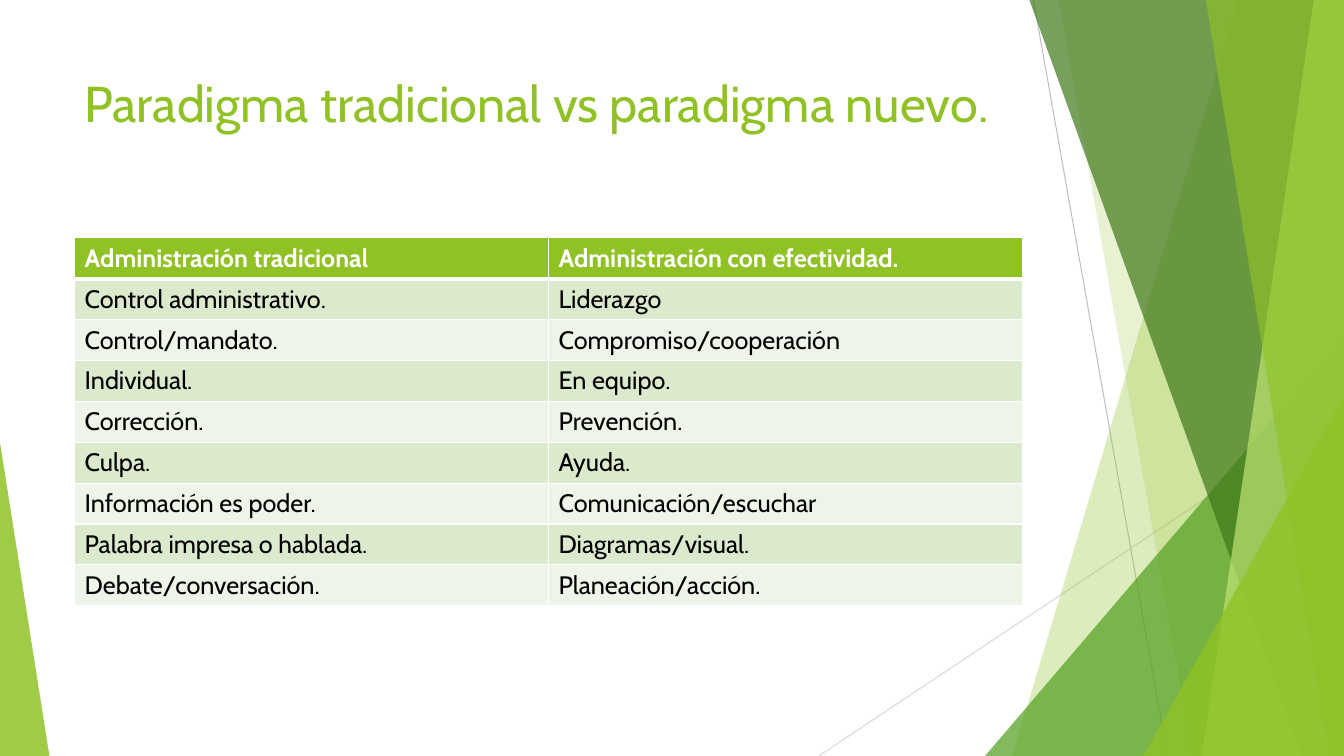
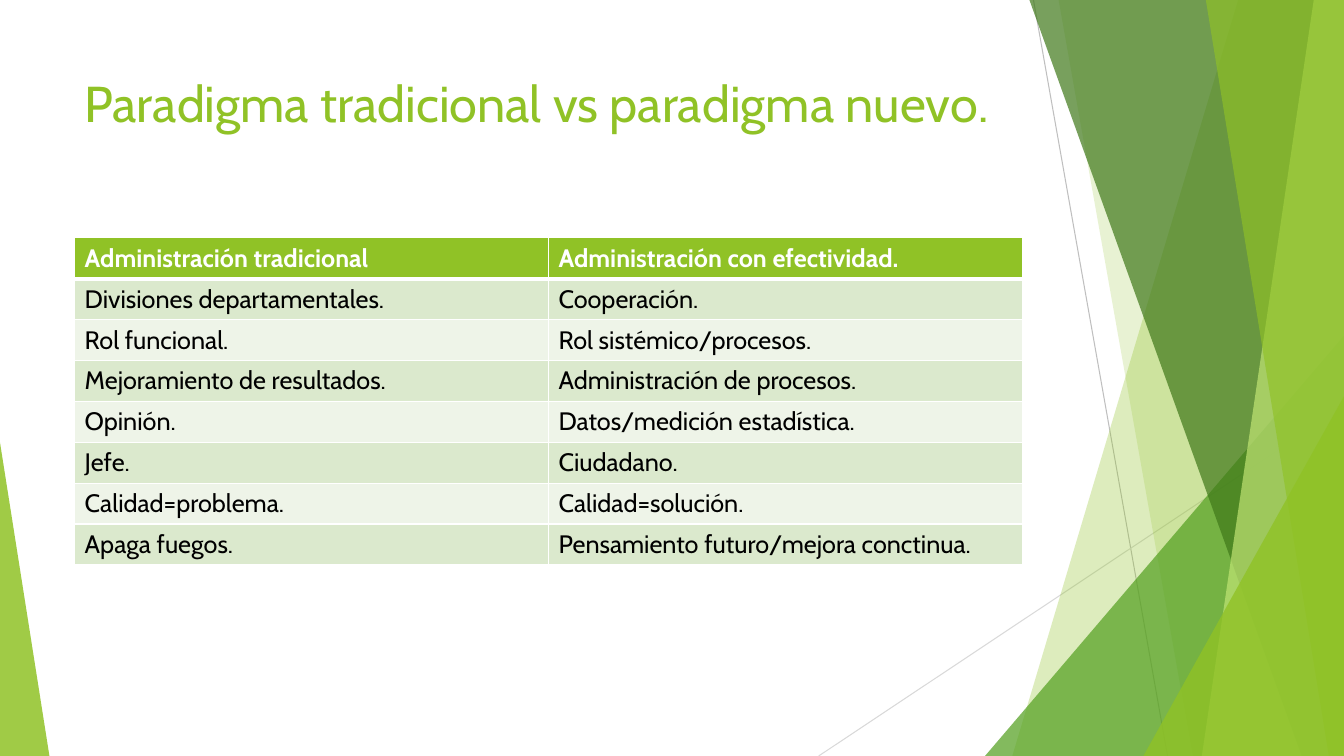
from pptx import Presentation as Deck
from pptx.dml.color import RGBColor as Color
from pptx.enum.shapes import MSO_CONNECTOR as Link, MSO_SHAPE as Shape
from pptx.enum.text import MSO_ANCHOR as Anchor, MSO_AUTO_SIZE as Fit, PP_ALIGN as Align
from pptx.oxml.ns import qn
from pptx.util import Inches, Pt
from lxml.etree import SubElement as Sub

FONT = "Cabin"
WIDE, HIGH = 13.33, 7.5
LEFT, SPAN = 0.74, 9.4
LIME, LEAF, MOSS, PALE = "90C226", "54A021", "3F7819", "C0E474"
WHITE, BLACK = "FFFFFF", "000000"
TINTS = ("EEF4E8", "DBE9CD")
TITLE = "Paradigma tradicional vs paradigma nuevo."
HEAD = ("Administración tradicional", "Administración con efectividad.")
FIRST = (
    ("Control administrativo.", "Liderazgo"),
    ("Control/mandato.", "Compromiso/cooperación"),
    ("Individual.", "En equipo."),
    ("Corrección.", "Prevención."),
    ("Culpa.", "Ayuda."),
    ("Información es poder.", "Comunicación/escuchar"),
    ("Palabra impresa o hablada.", "Diagramas/visual."),
    ("Debate/conversación.", "Planeación/acción."),
)
SECOND = (
    ("Divisiones departamentales.", "Cooperación."),
    ("Rol funcional.", "Rol sistémico/procesos."),
    ("Mejoramiento de resultados.", "Administración de procesos."),
    ("Opinión.", "Datos/medición estadística."),
    ("Jefe.", "Ciudadano."),
    ("Calidad=problema.", "Calidad=solución."),
    ("Apaga fuegos.", "Pensamiento futuro/mejora conctinua."),
)


def paint(fill, tone, alpha=100):
    """Fill with a hex colour at an opacity in percent."""
    fill.solid()
    fill.fore_color.rgb = Color.from_string(tone)
    if alpha < 100:
        node = fill.fore_color._xFill.find(qn("a:srgbClr"))
        Sub(node, qn("a:alpha")).set("val", str(alpha * 1000))


def finish(shape, tone, alpha):
    """Give a shape a clear fill without line or shadow."""
    paint(shape.fill, tone, alpha)
    shape.line.fill.background()
    shape.shadow.inherit = False


def stroke(slide, start, end, tone):
    """Draw a thin straight line."""
    ends = [Inches(n) for n in start + end]
    line = slide.shapes.add_connector(Link.STRAIGHT, *ends)
    paint(line.line.fill, tone)
    line.line.width = Pt(0.75)
    Sub(line.element.spPr, qn("a:effectLst"))


def band(slide, top, base, tone, alpha):
    """Draw a full-height band from a slanted edge to the right side."""
    spots = [(top, 0), (WIDE, 0), (WIDE, HIGH), (base, HIGH)]
    spots = [(Inches(x), Inches(y)) for x, y in spots]
    form = slide.shapes.build_freeform(*spots[0])
    form.add_line_segments(spots[1:], close=True)
    finish(form.convert_to_shape(), tone, alpha)


def wedge(slide, left, top, wide, peak, tone, alpha):
    """Draw a triangle that stands on the bottom edge."""
    box = [Inches(n) for n in (left, top, wide, HIGH - top)]
    shape = slide.shapes.add_shape(Shape.ISOSCELES_TRIANGLE, *box)
    shape.adjustments[0] = peak
    finish(shape, tone, alpha)


def adorn(slide):
    """Draw the facets and move them to the layout shared by all slides."""
    stroke(slide, (10.25, 0), (11.58, HIGH), "BFBFBF")
    stroke(slide, (WIDE, 4.03), (8.12, HIGH), "D9D9D9")
    band(slide, 12.28, 10.04, LIME, 30)
    band(slide, 10.5, 11.83, LIME, 20)
    wedge(slide, 9.77, 3.33, 3.56, 1, LEAF, 72)
    band(slide, 10.21, 12.91, MOSS, 70)
    band(slide, 13.03, 11.92, PALE, 70)
    band(slide, 11.96, 13.18, LIME, 65)
    wedge(slide, 11.34, 3.93, 1.99, 1, LIME, 80)
    wedge(slide, 0, 4.39, 0.49, 0, LIME, 85)
    tree = slide.slide_layout.shapes.element
    for shape in list(slide.shapes):
        if not shape.is_placeholder:
            tree.append(shape.element)


def write(frame, text, size, tone, bold=False):
    """Add one formatted run to the first paragraph."""
    part = frame.paragraphs[0]
    part.alignment = Align.LEFT
    run = part.add_run()
    run.text = text
    run.font.name, run.font.size, run.font.bold = FONT, Pt(size), bold
    run.font.color.rgb = Color.from_string(tone)


def head(slide):
    """Place and write the slide title."""
    title = slide.shapes.title
    title.left, title.top = Inches(LEFT), Inches(0.67)
    title.width, title.height = Inches(SPAN), Inches(1.44)
    frame = title.text_frame
    frame.auto_size, frame.vertical_anchor = Fit.NONE, Anchor.TOP
    write(frame, TITLE, 36, LIME)


def edge(cell, row):
    """Set white cell borders, thick below the header row."""
    props = cell._tc.get_or_add_tcPr()
    thick = {("T", 1), ("B", 0)}
    for side in "LRTB":
        wide = 3 if (side, row) in thick else 1
        line = Sub(props, qn("a:ln" + side), w=str(Pt(wide)))
        fill = Sub(line, qn("a:solidFill"))
        Sub(fill, qn("a:srgbClr"), val=WHITE)


def grid(slide, rows):
    """Add the two-column table under its header."""
    rows = (HEAD,) + rows
    tall = Pt(29.2)
    box = (Inches(LEFT), Inches(2.36), Inches(SPAN), tall * len(rows))
    table = slide.shapes.add_table(len(rows), len(HEAD), *box).table
    table.horz_banding = False
    for r, texts in enumerate(rows):
        table.rows[r].height = tall
        for c, text in enumerate(texts):
            cell = table.cell(r, c)
            edge(cell, r)
            paint(cell.fill, TINTS[r % 2] if r else LIME)
            write(cell.text_frame, text, 18, BLACK if r else WHITE, r == 0)


def main():
    """Build and save the deck."""
    deck = Deck()
    deck.slide_width, deck.slide_height = Inches(WIDE), Inches(HIGH)
    plan = deck.slide_layouts[5]
    for n, rows in enumerate((FIRST, SECOND)):
        slide = deck.slides.add_slide(plan)
        if n == 0:
            adorn(slide)
        head(slide)
        grid(slide, rows)
    deck.save("out.pptx")


if __name__ == "__main__":
    main()
